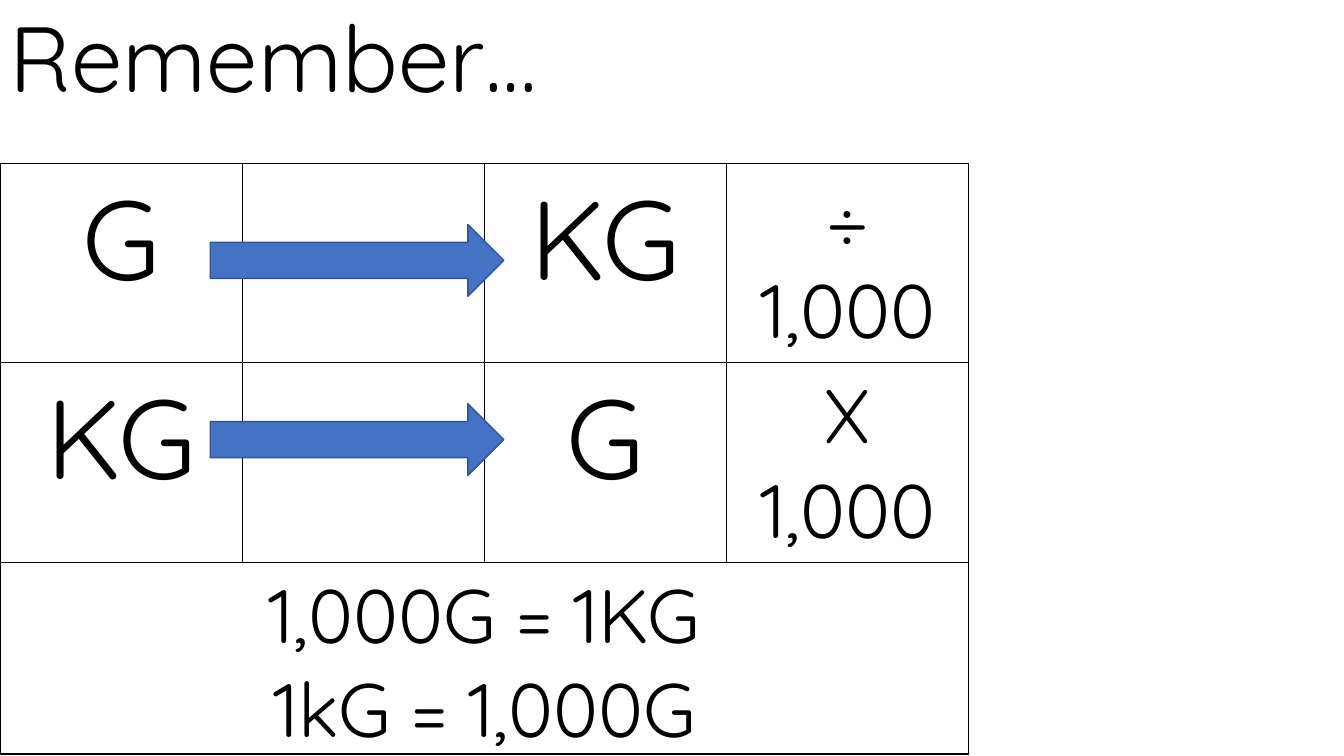
"""Build a slide on converting between grams and kilograms."""
from lxml.etree import SubElement
from pptx import Presentation
from pptx.dml.color import RGBColor
from pptx.enum.shapes import MSO_SHAPE as Shape
from pptx.enum.text import MSO_ANCHOR as Anchor, PP_ALIGN as Align
from pptx.oxml.ns import qn
from pptx.util import Pt

TITLE = "Remember…"
CONVERSIONS = [("G", "", "KG", "÷ 1,000"), ("KG", "", "G", "X 1,000")]
FACTS = ["1,000G = 1KG", "1kG = 1,000G"]

THEME = {
    "font": "Quicksand",
    "text": "000000",
    "border": "000000",
    "arrow": "4472C4",
    "arrow_line": "325491",
    "title_size": 66,
    "unit_size": 80,
    "fact_size": 54,
}

SLIDE_SIZE = (960, 540)
TITLE_BOX = (0, 0, 720, 90)
TABLE_LEFT, TABLE_TOP = 0, 116.7
COLUMN_WIDTH = 173
ROW_HEIGHTS = (142.5, 142.5, 125.4)
ARROW_LEFT, ARROW_TOP = 150.2, 160.3
ARROW_WIDTH, ARROW_HEIGHT, ARROW_STEP = 209.7, 51.4, 128


def colour(name):
    return RGBColor.from_string(THEME[name])


def write(text_frame, lines, size, alignment):
    for index, line in enumerate(lines):
        paragraph = text_frame.paragraphs[0] if index == 0 else text_frame.add_paragraph()
        paragraph.text = line
        paragraph.alignment = alignment
        paragraph.font.name = THEME["font"]
        paragraph.font.size = Pt(THEME[size])
        paragraph.font.color.rgb = colour("text")


def style_cell(cell):
    properties = cell._tc.get_or_add_tcPr()
    for side in ("lnL", "lnR", "lnT", "lnB"):
        line = SubElement(properties, qn(f"a:{side}"), w=str(Pt(1)))
        fill = SubElement(line, qn("a:solidFill"))
        SubElement(fill, qn("a:srgbClr"), val=THEME["border"])
    cell.fill.background()


def add_title(slide):
    text_frame = slide.shapes.add_textbox(*map(Pt, TITLE_BOX)).text_frame
    text_frame.word_wrap = True
    text_frame.vertical_anchor = Anchor.MIDDLE
    write(text_frame, [TITLE], "title_size", Align.LEFT)
    text_frame.paragraphs[0].line_spacing = 0.9


def add_conversion_table(slide):
    columns = len(CONVERSIONS[0])
    table = slide.shapes.add_table(
        len(ROW_HEIGHTS), columns, Pt(TABLE_LEFT), Pt(TABLE_TOP),
        Pt(COLUMN_WIDTH * columns), Pt(sum(ROW_HEIGHTS))).table
    table.first_row = table.horz_banding = False
    for column in table.columns:
        column.width = Pt(COLUMN_WIDTH)
    for row, height in zip(table.rows, ROW_HEIGHTS):
        row.height = Pt(height)
    for cell in table.iter_cells():
        style_cell(cell)
    for row, texts in enumerate(CONVERSIONS):
        for column, text in enumerate(texts):
            if text:
                size = "fact_size" if column == columns - 1 else "unit_size"
                write(table.cell(row, column).text_frame, [text], size, Align.CENTER)
    facts = table.cell(len(CONVERSIONS), 0)
    facts.merge(table.cell(len(CONVERSIONS), columns - 1))
    write(facts.text_frame, FACTS, "fact_size", Align.CENTER)


def add_arrow(slide, row):
    arrow = slide.shapes.add_shape(
        Shape.RIGHT_ARROW, Pt(ARROW_LEFT), Pt(ARROW_TOP + row * ARROW_STEP),
        Pt(ARROW_WIDTH), Pt(ARROW_HEIGHT))
    arrow.shadow.inherit = False
    arrow.fill.solid()
    arrow.fill.fore_color.rgb = colour("arrow")
    arrow.line.color.rgb = colour("arrow_line")
    arrow.line.width = Pt(1)


def main():
    presentation = Presentation()
    presentation.slide_width, presentation.slide_height = map(Pt, SLIDE_SIZE)
    slide = presentation.slides.add_slide(presentation.slide_layouts[6])
    add_title(slide)
    add_conversion_table(slide)
    for row in range(len(CONVERSIONS)):
        add_arrow(slide, row)
    presentation.save("out.pptx")


if __name__ == "__main__":
    main()
